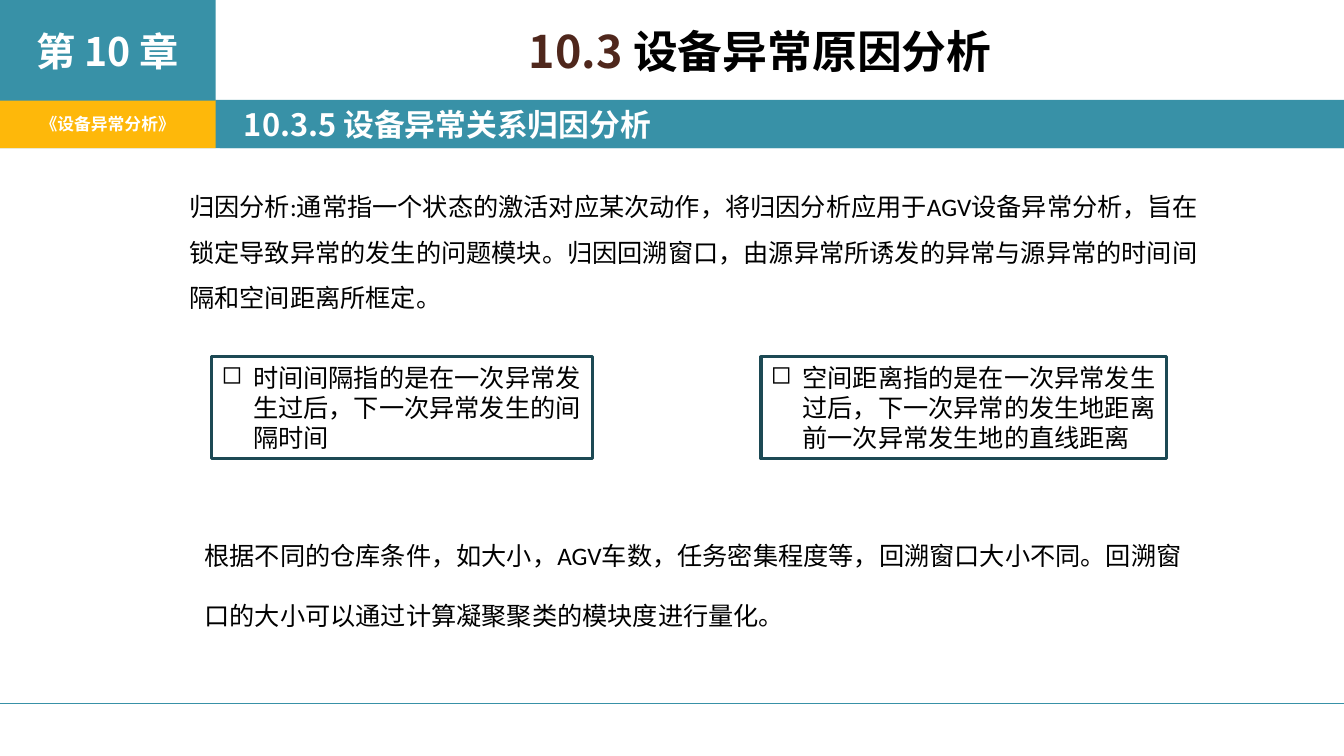
from lxml.etree import SubElement
from pptx import Presentation
from pptx.dml.color import RGBColor
from pptx.enum.shapes import MSO_CONNECTOR, MSO_SHAPE
from pptx.enum.text import MSO_ANCHOR, PP_ALIGN
from pptx.oxml.ns import qn
from pptx.util import Pt

COLOURS = {
    "teal": "3891A7",
    "dark teal": "1C4954",
    "amber": "FEB80A",
    "brown": "4F271C",
    "black": "000000",
    "white": "FFFFFF",
}
HEADING_FONT = "Noto Sans CJK SC"
BODY_FONT = "Calibri"


def colour(name):
    return RGBColor.from_string(COLOURS[name])


def add_box(slide, left, top, width, height, fill=None, line=None):
    shape = slide.shapes.add_shape(
        MSO_SHAPE.RECTANGLE, Pt(left), Pt(top), Pt(width), Pt(height))
    shape.shadow.inherit = False
    if fill:
        shape.fill.solid()
        shape.fill.fore_color.rgb = colour(fill)
    else:
        shape.fill.background()
    if line:
        shape.line.color.rgb = colour(line)
        shape.line.width = Pt(2.25)
    else:
        shape.line.fill.background()
    return shape


def add_text_box(slide, left, top, width, height):
    return slide.shapes.add_textbox(Pt(left), Pt(top), Pt(width), Pt(height))


def write(shape, text, size, font_colour, font=BODY_FONT, bold=False,
          align=PP_ALIGN.LEFT, anchor=MSO_ANCHOR.TOP, spacing=None):
    frame = shape.text_frame
    frame.word_wrap = True
    frame.vertical_anchor = anchor
    paragraph = frame.paragraphs[0]
    paragraph.add_run().text = text
    paragraph.alignment = align
    paragraph.line_spacing = spacing
    paragraph.font.size = Pt(size)
    paragraph.font.bold = bold
    paragraph.font.name = font
    paragraph.font.color.rgb = colour(font_colour)
    # East Asian letters take the heading font everywhere
    defaults = paragraph._p.pPr.find(qn("a:defRPr"))
    SubElement(defaults, qn("a:ea")).set("typeface", HEADING_FONT)
    return paragraph


def write_heading(shape, text, size, font_colour="white",
                  align=PP_ALIGN.CENTER, anchor=MSO_ANCHOR.MIDDLE):
    return write(shape, text, size, font_colour, HEADING_FONT, True, align, anchor)


def add_definition(slide, left, width, text):
    box = add_box(slide, left, 254.9, width, 72.7, line="dark teal")
    paragraph = write(box, text, 18, "black")
    properties = paragraph._p.pPr
    properties.set("marL", str(Pt(22.5)))
    properties.set("indent", str(-Pt(22.5)))
    bullet = properties.makeelement(qn("a:buChar"), {"char": "◻"})
    properties.find(qn("a:defRPr")).addprevious(bullet)


def add_rule(slide, top, width):
    rule = slide.shapes.add_connector(
        MSO_CONNECTOR.STRAIGHT, Pt(0), Pt(top), Pt(width), Pt(top))
    rule.line.color.rgb = colour("teal")
    rule.line.width = Pt(0.79)
    SubElement(rule._element.spPr, qn("a:effectLst"))


def main():
    presentation = Presentation()
    presentation.slide_width = Pt(960)
    presentation.slide_height = Pt(540)
    slide = presentation.slides.add_slide(presentation.slide_layouts[6])

    # Chapter and book labels, bottom rule
    add_box(slide, 0, 71.3, 960, 34.5, fill="teal")
    add_box(slide, 0, 71.3, 154, 34.5, fill="amber")
    chapter = add_box(slide, 0, 0, 154, 72, fill="teal")
    write_heading(chapter, "第 10 章", 28)
    add_rule(slide, 502.5, 960)
    book = add_text_box(slide, 0, 71.3, 154, 34.5)
    write_heading(book, "《设备异常分析》", 12)

    # Title and section heading
    title = add_text_box(slide, 166.3, 13.7, 753.8, 57.6)
    paragraph = write_heading(title, "10.3 ", 32, "black", anchor=MSO_ANCHOR.TOP)
    paragraph.runs[0].font.color.rgb = colour("brown")
    paragraph.add_run().text = "设备异常原因分析"
    section = add_box(slide, 157, 72, 803, 33.8, fill="teal")
    section.text_frame.margin_left = Pt(17.3)
    write_heading(section, "10.3.5 设备异常关系归因分析", 22, align=PP_ALIGN.JUSTIFY)

    # Introduction
    introduction = add_text_box(slide, 128.2, 122.4, 748, 102.2)
    write(introduction,
          "归因分析:通常指一个状态的激活对应某次动作，将归因分析应用于AGV设备异常分析，"
          "旨在锁定导致异常的发生的问题模块。归因回溯窗口，由源异常所诱发的异常与源异常的"
          "时间间隔和空间距离所框定。", 18, "black", spacing=1.5)

    # Definitions of the two window measures
    add_definition(slide, 151.2, 272.2,
                   "时间间隔指的是在一次异常发生过后，下一次异常发生的间隔时间")
    add_definition(slide, 543.6, 289.4,
                   "空间距离指的是在一次异常发生过后，下一次异常的发生地距离"
                   "前一次异常发生地的直线距离")

    # Conclusion
    conclusion = add_text_box(slide, 139, 360.7, 721.4, 88.6)
    write(conclusion,
          "根据不同的仓库条件，如大小，AGV车数，任务密集程度等，回溯窗口大小不同。"
          "回溯窗口的大小可以通过计算凝聚聚类的模块度进行量化。", 18, "black", spacing=2.0)

    presentation.save("out.pptx")


if __name__ == "__main__":
    main()
